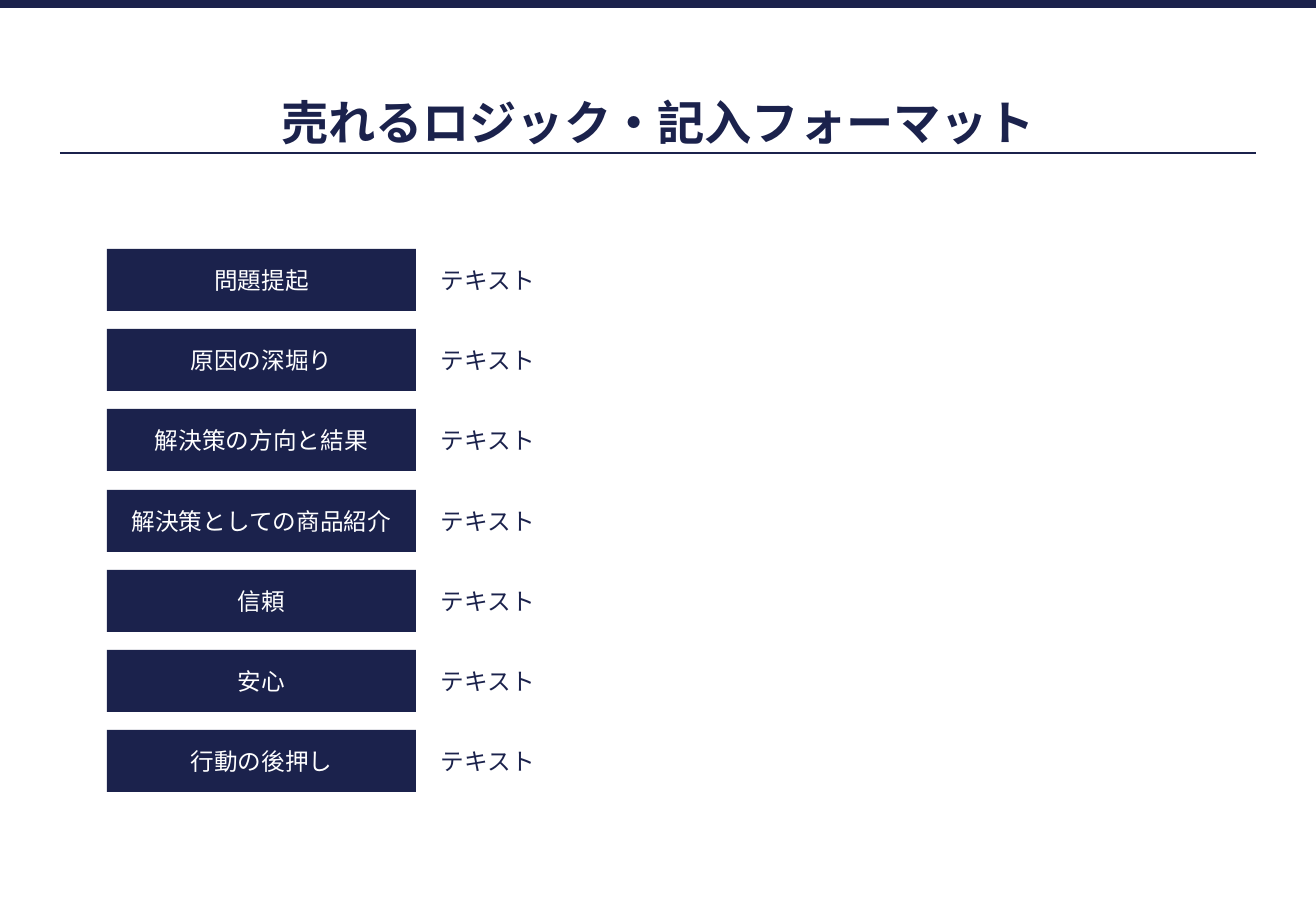
import lxml.etree
import pptx
import pptx.dml.color
import pptx.enum.shapes
import pptx.enum.text
import pptx.oxml.ns
import pptx.util

TITLE = "売れるロジック・記入フォーマット"
ROWS = [
    ("問題提起", "テキスト"),
    ("原因の深堀り", "テキスト"),
    ("解決策の方向と結果", "テキスト"),
    ("解決策としての商品紹介", "テキスト"),
    ("信頼", "テキスト"),
    ("安心", "テキスト"),
    ("行動の後押し", "テキスト"),
]

NAVY = pptx.dml.color.RGBColor(0x1B, 0x22, 0x4C)
WHITE = pptx.dml.color.RGBColor(0xFF, 0xFF, 0xFF)
TITLE_FONT = "Arial"
BODY_FONT = "Noto Sans CJK JP"
ALIGN = pptx.enum.text.PP_ALIGN
RECT = pptx.enum.shapes.MSO_SHAPE.RECTANGLE

SLIDE_W, SLIDE_H = 1316, 911
MARGIN = 60
CONTENT_W = SLIDE_W - 2 * MARGIN
BAR_H = 8
TITLE_TOP, TITLE_H = 63, 89
RULE_Y = 153
LABEL_LEFT, LABEL_W, LABEL_H = 107, 309, 62
FIRST_TOP, LAST_TOP = 249, 730
ENTRY_LEFT, ENTRY_H = 441, 29
ENTRY_W = SLIDE_W - MARGIN - ENTRY_LEFT


def px(n):
    return pptx.util.Emu(round(n * 914400 / 121.5))


def box(*lengths):
    return [px(n) for n in lengths]


def write(s, text, size, color, font, align, inset=0, bold=False):
    tf = s.text_frame
    tf.text = text
    tf.word_wrap = True
    tf.auto_size = pptx.enum.text.MSO_AUTO_SIZE.NONE
    tf.vertical_anchor = pptx.enum.text.MSO_ANCHOR.MIDDLE
    tf.margin_left = tf.margin_right = px(inset)
    tf.margin_top = tf.margin_bottom = px(inset)
    p = tf.paragraphs[0]
    p.alignment = align
    r = p.runs[0]
    r.font.size = pptx.util.Pt(size)
    r.font.bold = bold
    r.font.color.rgb = color
    r.font.name = font
    ea = lxml.etree.SubElement(r._r.get_or_add_rPr(), pptx.oxml.ns.qn("a:ea"))
    ea.set("typeface", font)
    return p


def add_block(slide, *lengths):
    s = slide.shapes.add_shape(RECT, *box(*lengths))
    s.shadow.inherit = False
    s.fill.solid()
    s.fill.fore_color.rgb = NAVY
    s.line.fill.background()
    return s


def add_heading(slide):
    add_block(slide, 0, 0, SLIDE_W, BAR_H)
    rule = slide.shapes.add_connector(
        pptx.enum.shapes.MSO_CONNECTOR.STRAIGHT,
        *box(MARGIN, RULE_Y, MARGIN + CONTENT_W, RULE_Y))
    rule.line.color.rgb = NAVY
    rule.line.width = pptx.util.Pt(1)
    lxml.etree.SubElement(rule._element.spPr, pptx.oxml.ns.qn("a:effectLst"))
    s = slide.shapes.title
    s.left, s.top, s.width, s.height = box(MARGIN, TITLE_TOP, CONTENT_W, TITLE_H)
    p = write(s, TITLE, 28, NAVY, TITLE_FONT, ALIGN.CENTER, bold=True)
    p.line_spacing = 1.5


def add_rows(slide):
    pitch = (LAST_TOP - FIRST_TOP) / (len(ROWS) - 1)
    for i, (label, entry) in enumerate(ROWS):
        top = round(FIRST_TOP + i * pitch)
        s = add_block(slide, LABEL_LEFT, top, LABEL_W, LABEL_H)
        write(s, label, 14, WHITE, BODY_FONT, ALIGN.CENTER, inset=5)
        entry_top = top + (LABEL_H - ENTRY_H) / 2
        s = slide.shapes.add_textbox(*box(ENTRY_LEFT, entry_top, ENTRY_W, ENTRY_H))
        write(s, entry, 14, NAVY, BODY_FONT, ALIGN.LEFT)


def main():
    prs = pptx.Presentation()
    prs.slide_width, prs.slide_height = box(SLIDE_W, SLIDE_H)
    slide = prs.slides.add_slide(prs.slide_layouts[5])
    add_heading(slide)
    add_rows(slide)
    prs.save("out.pptx")


if __name__ == "__main__":
    main()
